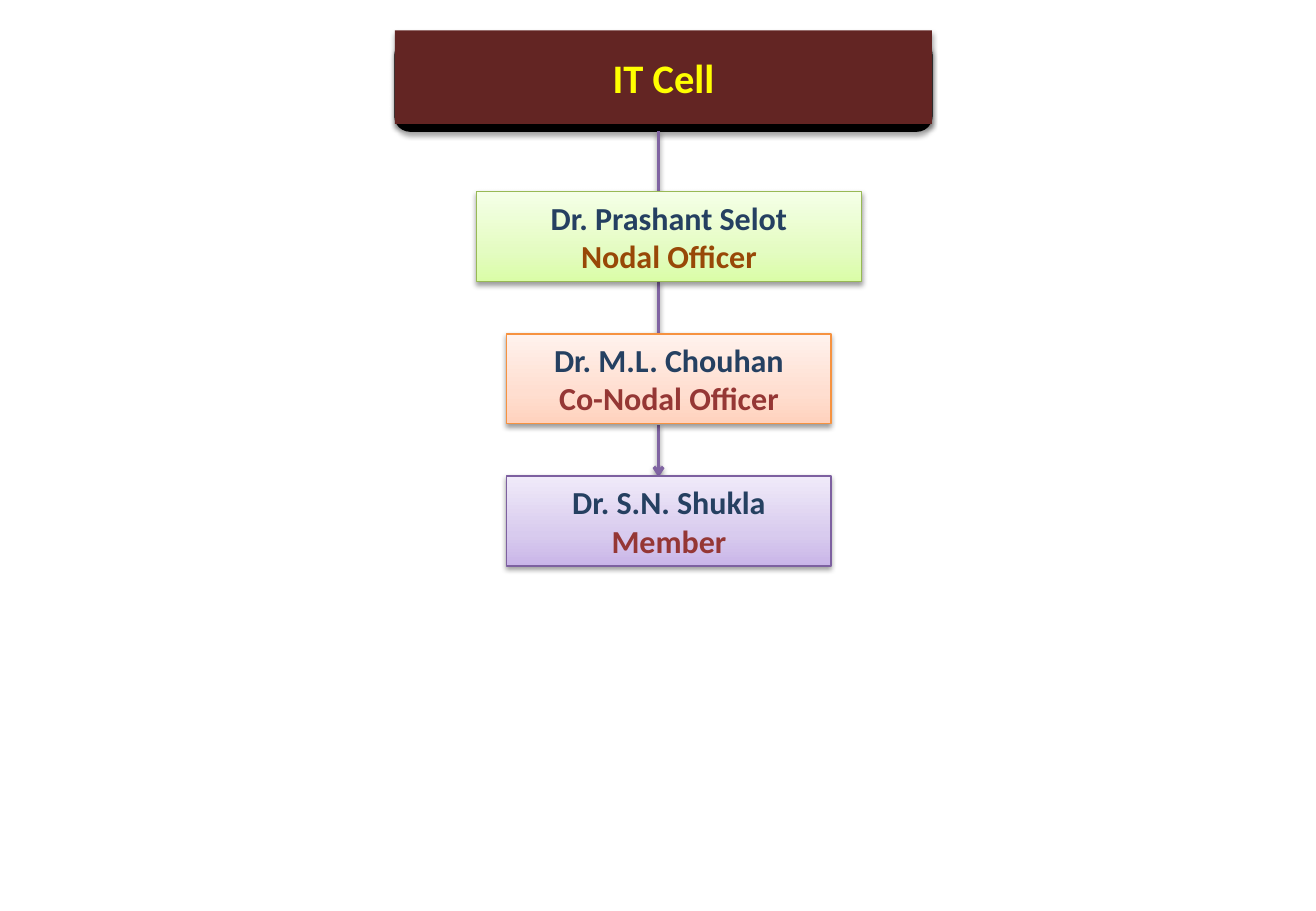
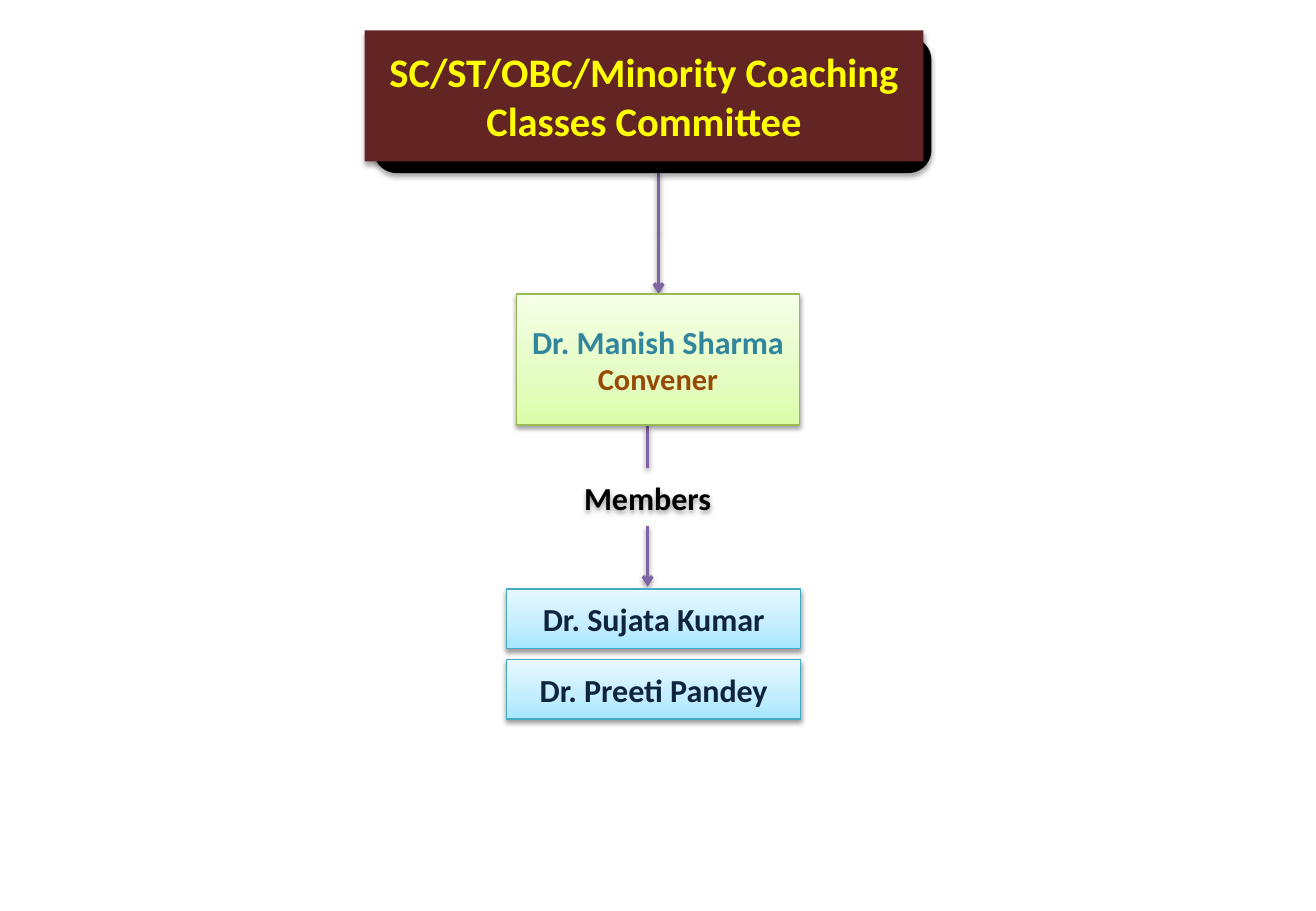
from copy import deepcopy

from lxml import etree
from pptx import Presentation
from pptx.dml.color import RGBColor
from pptx.enum.shapes import MSO_CONNECTOR, MSO_SHAPE
from pptx.enum.text import MSO_ANCHOR, PP_ALIGN
from pptx.oxml.ns import qn
from pptx.util import Inches, Pt

RECT, ROUNDED = MSO_SHAPE.RECTANGLE, MSO_SHAPE.ROUNDED_RECTANGLE
STRAIGHT = MSO_CONNECTOR.STRAIGHT
MIDDLE, CENTER = MSO_ANCHOR.MIDDLE, PP_ALIGN.CENTER
TITLE_ONLY = 5

COLORS = {
    "black": "000000", "maroon": "632523", "yellow": "FFFF00",
    "purple": "8064A2", "navy": "254061", "ink": "0F243E",
    "teal": "31859C", "brown": "984807", "red": "953735",
    "green_low": "DAFDA7", "green_mid": "E4FCC2",
    "green_high": "F5FFE7", "green_line": "98B955",
    "orange_low": "FFD2BD", "orange_mid": "FFDED0",
    "orange_high": "FFF2ED", "orange_line": "F69240",
    "violet_low": "C9B5E8", "violet_mid": "D8CBEE",
    "violet_high": "F0EAF9", "violet_line": "7D60A0",
    "blue_low": "A7E6FF", "blue_mid": "C1EDFF",
    "blue_high": "E7F8FF", "blue_line": "46AAC5",
}
STOPS = {"low": 0, "mid": 0.35, "high": 1}
FRAME = {
    "word_wrap": True, "vertical_anchor": MIDDLE,
    "margin_left": Inches(0.07), "margin_right": Inches(0.07),
    "margin_top": Inches(0.04), "margin_bottom": Inches(0.04),
}
FONT = {"name": "Calibri", "bold": True}


def rgb(name):
    return RGBColor.from_string(COLORS[name])


def apply(target, values):
    for name, value in values.items():
        setattr(target, name, value)


def place(sp, box):
    apply(sp, dict(zip(("left", "top", "width", "height"), map(Inches, box))))


def add_shadow(sp, opacity=38, distance=1.6):
    sp_pr = sp._element.spPr
    effects = sp_pr.find(qn("a:effectLst"))
    if effects is None:
        effects = etree.SubElement(sp_pr, qn("a:effectLst"))
    shadow = etree.SubElement(
        effects, qn("a:outerShdw"), blurRad=str(Pt(3.1)),
        dist=str(Pt(distance)), dir="5400000", rotWithShape="0")
    color = etree.SubElement(shadow, qn("a:srgbClr"), val=COLORS["black"])
    etree.SubElement(color, qn("a:alpha"), val=str(opacity * 1000))


def write(sp, lines):
    tf = sp.text_frame
    apply(tf, FRAME)
    for i, (text, size, color) in enumerate(lines):
        p = tf.add_paragraph() if i else tf.paragraphs[0]
        p.alignment = CENTER
        r = p.add_run()
        r.text = text
        apply(r.font, FONT | {"size": Pt(size)})
        r.font.color.rgb = rgb(color)


def add_banner(slide, text, front, back):
    backing = slide.shapes.add_shape(ROUNDED, *map(Inches, back))
    backing.line.color.rgb = rgb("black")
    backing.line.width = Pt(0.75)
    title = slide.shapes.title
    place(title, front)
    geometry = etree.SubElement(
        title._element.spPr, qn("a:prstGeom"), prst="roundRect")
    etree.SubElement(geometry, qn("a:avLst"))
    slide.shapes._spTree.append(title._element)
    for sp, color in ((backing, "black"), (title, "maroon")):
        sp.fill.solid()
        sp.fill.fore_color.rgb = rgb(color)
        sp.shadow.inherit = False
        add_shadow(sp, 35, 1.8)
    write(title, [(text, 24, "yellow")])


def add_card(slide, box, tone, lines):
    sp = slide.shapes.add_shape(RECT, *map(Inches, box))
    fill = sp.fill
    fill.gradient()
    fill.gradient_angle = 90
    stops = sp._element.spPr.find(qn("a:gradFill")).find(qn("a:gsLst"))
    stops.insert(1, deepcopy(stops[0]))
    for stop, (part, position) in zip(fill.gradient_stops, STOPS.items()):
        stop.position = position
        stop.color.rgb = rgb(f"{tone}_{part}")
    sp.line.color.rgb = rgb(f"{tone}_line")
    sp.line.width = Pt(0.75)
    sp.shadow.inherit = False
    add_shadow(sp)
    write(sp, lines)


def add_label(slide, box, text):
    sp = slide.shapes.add_textbox(*map(Inches, box))
    sp.shadow.inherit = False
    add_shadow(sp)
    write(sp, [(text, 19, "black")])


def add_link(slide, x, top, bottom, arrow=False):
    link = slide.shapes.add_connector(
        STRAIGHT, *map(Inches, (x, top, x, bottom)))
    link.line.color.rgb = rgb("purple")
    link.line.width = Pt(2)
    if arrow:
        etree.SubElement(link.line._get_or_add_ln(), qn("a:tailEnd"),
                         type="arrow")
    add_shadow(link)


def build_it_cell(slide):
    add_banner(slide, "IT Cell", (3.25, 0.25, 4.42, 0.77),
               (3.25, 0.33, 4.42, 0.75))
    add_link(slide, 5.42, 1.08, 1.58)
    add_link(slide, 5.42, 2.32, 2.82)
    add_link(slide, 5.42, 3.5, 3.93, arrow=True)
    officers = [
        (3.92, 3.17, "green", "Dr. Prashant Selot", "Nodal Officer", "brown"),
        (4.17, 2.67, "orange", "Dr. M.L. Chouhan", "Co-Nodal Officer", "red"),
        (4.17, 2.67, "violet", "Dr. S.N. Shukla", "Member", "red"),
    ]
    for i, (left, width, tone, name, role, color) in enumerate(officers):
        add_card(slide, (left, 1.58 + 1.17 * i, width, 0.74), tone,
                 [(name, 19, "navy"), (role, 19, color)])


def build_coaching_committee(slide):
    add_link(slide, 5.42, 1.42, 1.92)
    add_link(slide, 5.42, 1.92, 2.42, arrow=True)
    add_link(slide, 5.33, 3.51, 3.85)
    add_link(slide, 5.33, 4.33, 4.83, arrow=True)
    add_banner(slide, "SC/ST/OBC/Minority Coaching Classes Committee",
               (3, 0.25, 4.6, 1.08), (3.08, 0.31, 4.58, 1.11))
    add_card(slide, (4.25, 2.42, 2.33, 1.08), "green",
             [("Dr. Manish Sharma", 19, "teal"), ("Convener", 18, "brown")])
    add_label(slide, (4.08, 3.85, 2.5, 0.49), "Members")
    for i, name in enumerate(("Dr. Sujata Kumar", "Dr. Preeti Pandey")):
        add_card(slide, (4.17, 4.85 + 0.58 * i, 2.42, 0.49), "blue",
                 [(name, 19, "ink")])


def main():
    prs = Presentation()
    prs.slide_width, prs.slide_height = Inches(10.83), Inches(7.5)
    for build in (build_it_cell, build_coaching_committee):
        build(prs.slides.add_slide(prs.slide_layouts[TITLE_ONLY]))
    prs.save("out.pptx")


if __name__ == "__main__":
    main()
